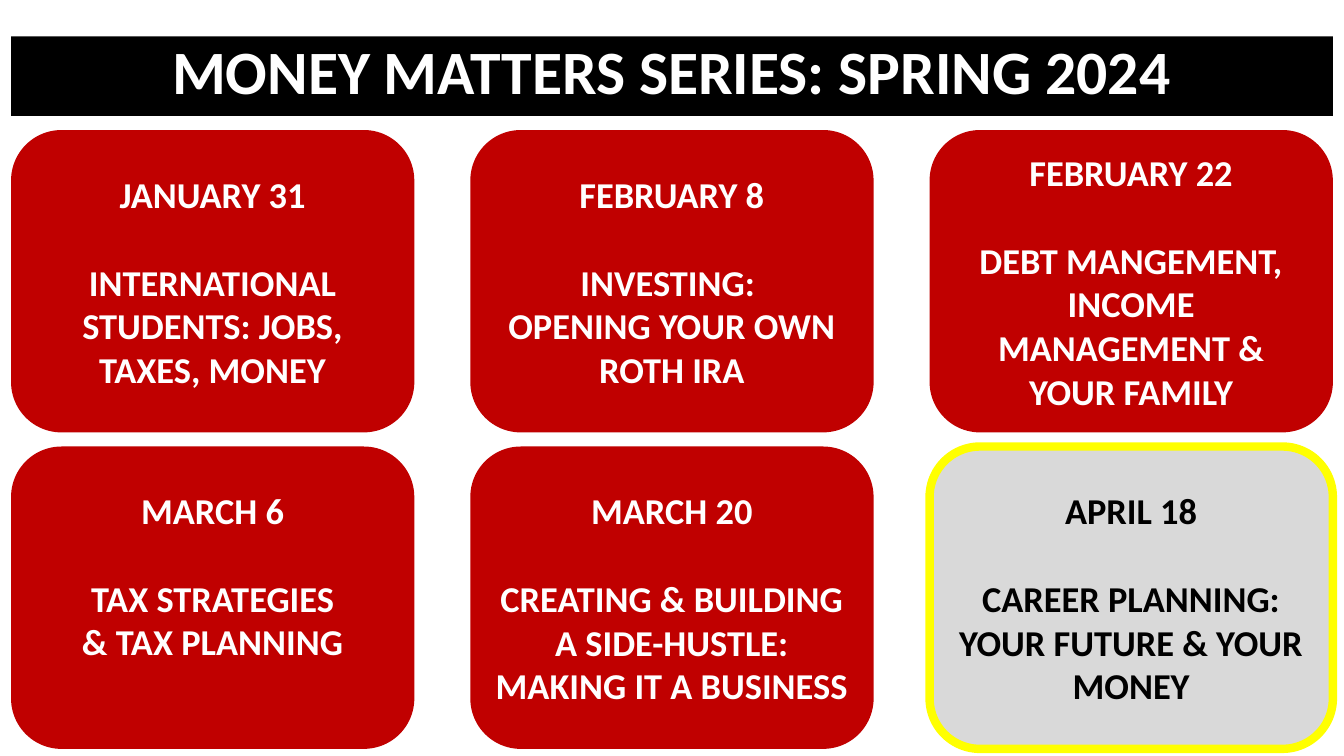
"""Build the Money Matters Series schedule slide."""
from dataclasses import dataclass

from pptx import Presentation
from pptx.dml.color import RGBColor
from pptx.enum.shapes import MSO_SHAPE
from pptx.enum.text import MSO_ANCHOR, PP_ALIGN
from pptx.util import Inches, Pt

HEADING = "MONEY MATTERS SERIES: SPRING 2024"
SESSIONS = [
    ("JANUARY 31", "INTERNATIONAL STUDENTS: JOBS, TAXES, MONEY"),
    ("FEBRUARY 8", "INVESTING: \vOPENING YOUR OWN ROTH IRA"),
    ("FEBRUARY 22", "DEBT MANGEMENT, INCOME MANAGEMENT & YOUR FAMILY"),
    ("MARCH 6", "TAX STRATEGIES\v& TAX PLANNING"),
    ("MARCH 20", "CREATING & BUILDING A SIDE-HUSTLE: MAKING IT A BUSINESS"),
    ("APRIL 18", "CAREER PLANNING: YOUR FUTURE & YOUR MONEY"),
]
HIGHLIGHTED = "APRIL 18"
RAISED = "MARCH 6"


@dataclass(frozen=True)
class Theme:
    """Colours, font and type sizes of the slide."""
    font: str = "Calibri"
    banner: str = "000000"
    card: str = "C00000"
    highlight: str = "D9D9D9"
    outline: str = "FFFF00"
    light: str = "FFFFFF"
    dark: str = "000000"
    heading_size: int = 44
    card_size: int = 26
    outline_width: int = 6
    line_gap: float = 31.7


THEME = Theme()
SLIDE_W, SLIDE_H = 13.33, 7.5
MARGIN = 0.11
BANNER_TOP, BANNER_H = 0.36, 0.79
COLUMNS = 3
CARD_W, CARD_H = 4, 3
GRID_TOP, ROW_GAP = 1.29, 0.14
CONTENT_W = SLIDE_W - 2 * MARGIN
COLUMN_STEP = (CONTENT_W - CARD_W) / (COLUMNS - 1)
ROW_STEP = CARD_H + ROW_GAP


def add_panel(slide, kind, box, fill, lines, size, colour):
    """Add a filled shape with centred bold lines of text."""
    panel = slide.shapes.add_shape(kind, *map(Inches, box))
    panel.shadow.inherit = False
    panel.fill.solid()
    panel.fill.fore_color.rgb = RGBColor.from_string(fill)
    panel.line.fill.background()
    frame = panel.text_frame
    frame.word_wrap = True
    frame.text = "\n".join(lines)
    for paragraph in frame.paragraphs:
        paragraph.alignment = PP_ALIGN.CENTER
        for run in paragraph.runs:
            run.font.name = THEME.font
            run.font.size = Pt(size)
            run.font.bold = True
            run.font.color.rgb = RGBColor.from_string(colour)
    return panel


def add_session(slide, index, date, topic):
    """Add one session card at its place in the grid."""
    row, column = divmod(index, COLUMNS)
    box = (MARGIN + column * COLUMN_STEP, GRID_TOP + row * ROW_STEP, CARD_W, CARD_H)
    special = date == HIGHLIGHTED
    card = add_panel(slide, MSO_SHAPE.ROUNDED_RECTANGLE, box,
                     THEME.highlight if special else THEME.card, (date, topic),
                     THEME.card_size, THEME.dark if special else THEME.light)
    frame = card.text_frame
    frame.vertical_anchor = MSO_ANCHOR.MIDDLE
    frame.paragraphs[1].space_before = Pt(THEME.line_gap)
    if date == RAISED:
        frame.margin_bottom += Pt(THEME.line_gap)
    if special:
        card.line.color.rgb = RGBColor.from_string(THEME.outline)
        card.line.width = Pt(THEME.outline_width)


def main():
    """Create and save the slide."""
    deck = Presentation()
    deck.slide_width, deck.slide_height = Inches(SLIDE_W), Inches(SLIDE_H)
    slide = deck.slides.add_slide(deck.slide_layouts[6])
    banner = add_panel(slide, MSO_SHAPE.RECTANGLE,
                       (MARGIN, BANNER_TOP, CONTENT_W, BANNER_H), THEME.banner,
                       [HEADING], THEME.heading_size, THEME.light)
    banner.text_frame.vertical_anchor = MSO_ANCHOR.TOP
    banner.text_frame.paragraphs[0].line_spacing = 0.9
    for index, (date, topic) in enumerate(SESSIONS):
        add_session(slide, index, date, topic)
    deck.save("out.pptx")


if __name__ == "__main__":
    main()
